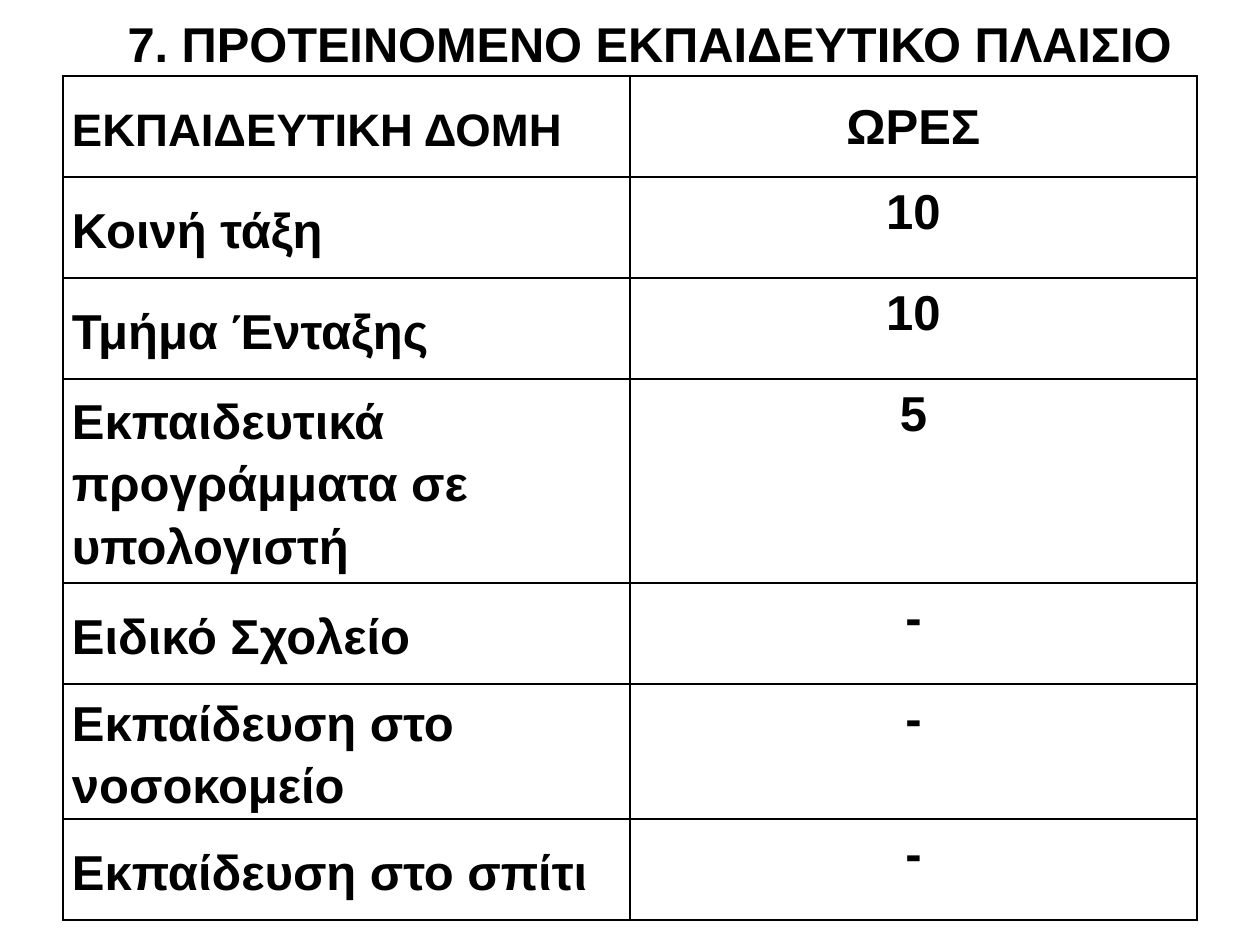
from dataclasses import dataclass

from lxml.etree import SubElement
from pptx import Presentation
from pptx.dml.color import RGBColor
from pptx.enum.text import MSO_ANCHOR, PP_ALIGN
from pptx.oxml.ns import qn
from pptx.util import Emu, Pt

PX = 914400 // 126


def px(n):
    return Emu(n * PX)


@dataclass(frozen=True)
class Theme:
    font: str = "Arial"
    ink: str = "000000"
    title: float = 27.9
    header: int = 26
    body: int = 28
    border: int = 1
    spacing: float = 1.15


class Deck:
    def __init__(self, prs, theme):
        self.theme = theme
        self.s = prs.slides.add_slide(prs.slide_layouts[6])

    def style(self, p, size, align):
        p.alignment = align
        p.font.name = self.theme.font
        p.font.size = Pt(size)
        p.font.bold = True
        p.font.color.rgb = RGBColor.from_string(self.theme.ink)

    def title(self, text, left, top, width, height):
        tf = self.s.shapes.add_textbox(px(left), px(top), px(width), px(height)).text_frame
        tf.word_wrap = True
        tf.vertical_anchor = MSO_ANCHOR.MIDDLE
        tf.text = text
        self.style(tf.paragraphs[0], self.theme.title, PP_ALIGN.CENTER)

    def border(self, cell):
        tc_pr = cell._tc.get_or_add_tcPr()
        for side in ("lnL", "lnR", "lnT", "lnB"):
            ln = SubElement(tc_pr, qn(f"a:{side}"), w=str(Pt(self.theme.border)))
            fill = SubElement(ln, qn("a:solidFill"))
            SubElement(fill, qn("a:srgbClr"), val=self.theme.ink)

    def cell(self, cell, text, size, align, anchor, top=0):
        cell.text = text
        cell.vertical_anchor = anchor
        cell.margin_left = cell.margin_right = px(9)
        cell.margin_top, cell.margin_bottom = px(top), 0
        p = cell.text_frame.paragraphs[0]
        p.line_spacing = self.theme.spacing
        self.style(p, size, align)
        self.border(cell)
        cell.fill.background()

    def table(self, rows, heights, left, top, width):
        shape = self.s.shapes.add_table(len(rows), 2, px(left), px(top), px(width), px(sum(heights)))
        table = shape.table
        table.first_row = table.horz_banding = False
        for i, ((name, hours), height) in enumerate(zip(rows, heights)):
            table.rows[i].height = px(height)
            is_header = i == 0
            name_size = self.theme.header if is_header else self.theme.body
            self.cell(table.cell(i, 0), name, name_size, PP_ALIGN.LEFT, MSO_ANCHOR.MIDDLE)
            self.cell(table.cell(i, 1), hours, self.theme.body, PP_ALIGN.CENTER,
                      MSO_ANCHOR.TOP, top=16 if is_header else 0)


ROWS = [
    ("ΕΚΠΑΙΔΕΥΤΙΚΗ ΔΟΜΗ", "ΩΡΕΣ"),
    ("Κοινή τάξη", "10"),
    ("Τμήμα Ένταξης", "10"),
    ("Εκπαιδευτικά προγράμματα σε υπολογιστή", "5"),
    ("Ειδικό Σχολείο", "-"),
    ("Εκπαίδευση στο νοσοκομείο", "-"),
    ("Εκπαίδευση στο σπίτι", "-"),
]
HEIGHTS = [101, 101, 101, 204, 101, 134, 101]


def main():
    prs = Presentation()
    prs.slide_width, prs.slide_height = px(1260), px(945)
    deck = Deck(prs, Theme())
    deck.title("7. ΠΡΟΤΕΙΝΟΜΕΝΟ ΕΚΠΑΙΔΕΥΤΙΚΟ ΠΛΑΙΣΙΟ", 40, 8, 1220, 69)
    deck.table(ROWS, HEIGHTS, 63, 76, 1134)
    prs.save("out.pptx")


if __name__ == "__main__":
    main()
